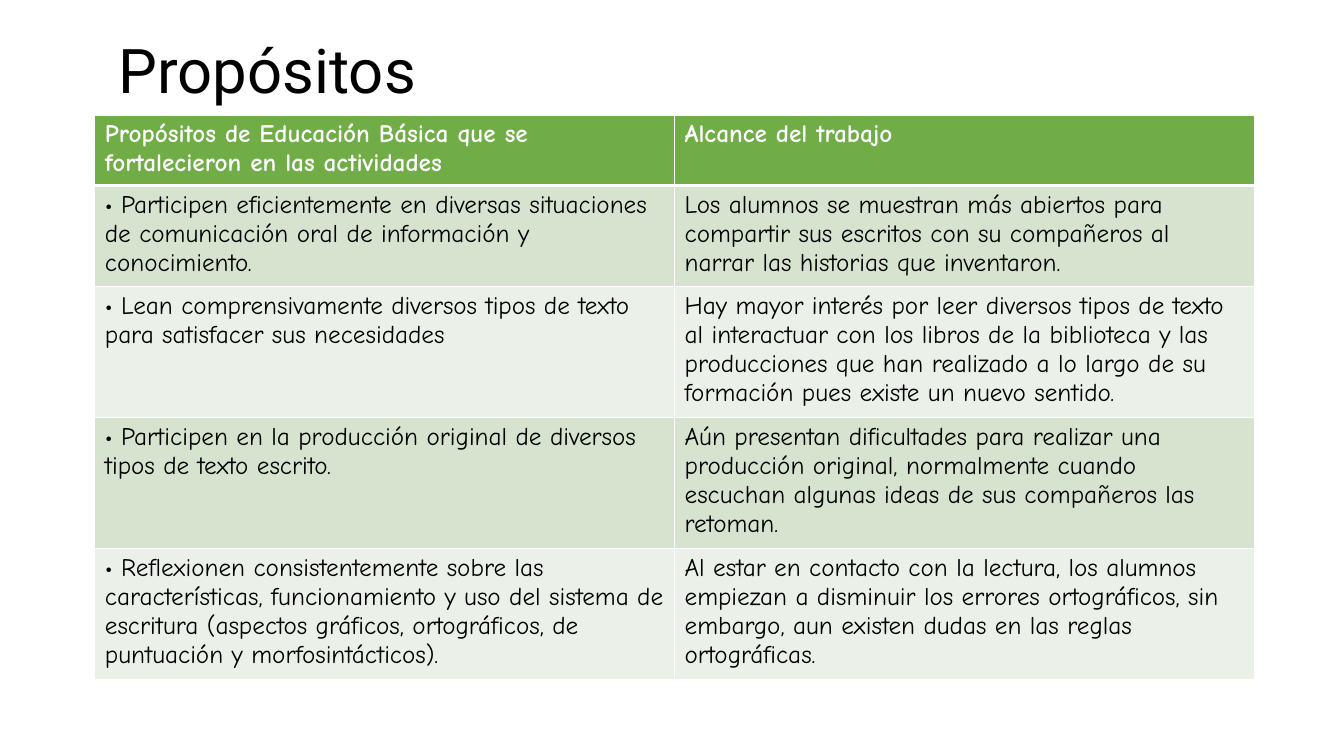
import pptx
import pptx.dml.color
import pptx.enum.text
import pptx.oxml
import pptx.oxml.ns
import pptx.util
from pptx.util import Inches

COLORS = {
    "white": "FFFFFF",
    "black": "000000",
    "header": "70AD47",
    "band_dark": "D5E3CF",
    "band_light": "EBF1E9",
}
ROWS = [
    ("Propósitos de Educación Básica que se fortalecieron en las actividades",
     "Alcance del trabajo"),
    ("• Participen eficientemente en diversas situaciones de comunicación oral "
     "de información y conocimiento.",
     "Los alumnos se muestran más abiertos para compartir sus escritos con su "
     "compañeros al narrar las historias que inventaron."),
    ("• Lean comprensivamente diversos tipos de texto para satisfacer sus necesidades",
     "Hay mayor interés por leer diversos tipos de texto al interactuar con los "
     "libros de la biblioteca y las producciones que han realizado a lo largo de "
     "su formación pues existe un nuevo sentido."),
    ("• Participen en la producción original de diversos tipos de texto escrito.",
     "Aún presentan dificultades para realizar una producción original, normalmente "
     "cuando escuchan algunas ideas de sus compañeros las retoman."),
    ("• Reflexionen consistentemente sobre las características, funcionamiento y uso "
     "del sistema de escritura (aspectos gráficos, ortográficos, de puntuación y "
     "morfosintácticos).",
     "Al estar en contacto con la lectura, los alumnos empiezan a disminuir los "
     "errores ortográficos, sin embargo, aun existen dudas en las reglas ortográficas."),
]
ROW_HEIGHTS = [0.67, 0.96, 1.25, 1.25, 1.25]


def add_run(p, text, font, size, color, bold=False):
    r = p.add_run()
    r.text = text
    r.font.name = font
    r.font.size = pptx.util.Pt(size)
    r.font.bold = bold
    r.font.color.rgb = pptx.dml.color.RGBColor.from_string(COLORS[color])


def add_border(cell, side, width):
    """Draw a white line on one side (L, R, T or B) of a cell."""
    cell._tc.get_or_add_tcPr().append(pptx.oxml.parse_xml(
        f'<a:ln{side} {pptx.oxml.ns.nsdecls("a")} w="{pptx.util.Pt(width)}">'
        f'<a:solidFill><a:srgbClr val="{COLORS["white"]}"/></a:solidFill></a:ln{side}>'))


prs = pptx.Presentation()
prs.slide_width = Inches(13.33)
prs.slide_height = Inches(7.5)
s = prs.slides.add_slide(prs.slide_layouts[6])

# Title
title = s.shapes.add_textbox(Inches(1.08), Inches(0), Inches(11.5), Inches(1.45))
tf = title.text_frame
tf.word_wrap = True
tf.vertical_anchor = pptx.enum.text.MSO_ANCHOR.MIDDLE
p = tf.paragraphs[0]
p.line_spacing = 0.9
add_run(p, "Propósitos", "Roboto", 44, "black")

# Table of purposes and their reach
table = s.shapes.add_table(len(ROWS), 2, Inches(0.94), Inches(1.14),
                           Inches(11.5), Inches(sum(ROW_HEIGHTS))).table
for column in table.columns:
    column.width = Inches(5.75)

for i, texts in enumerate(ROWS):
    table.rows[i].height = Inches(ROW_HEIGHTS[i])
    is_header = i == 0
    fill = "header" if is_header else ("band_dark" if i % 2 else "band_light")
    for j, text in enumerate(texts):
        cell = table.cell(i, j)
        for side in "LRTB":
            # The rule under the header is thicker than the others
            thick = (i, side) in ((0, "B"), (1, "T"))
            add_border(cell, side, 3 if thick else 1)
        cell.fill.solid()
        cell.fill.fore_color.rgb = pptx.dml.color.RGBColor.from_string(COLORS[fill])
        add_run(cell.text_frame.paragraphs[0], text, "Comic Neue", 18,
                "white" if is_header else "black", bold=is_header)

prs.save("out.pptx")
